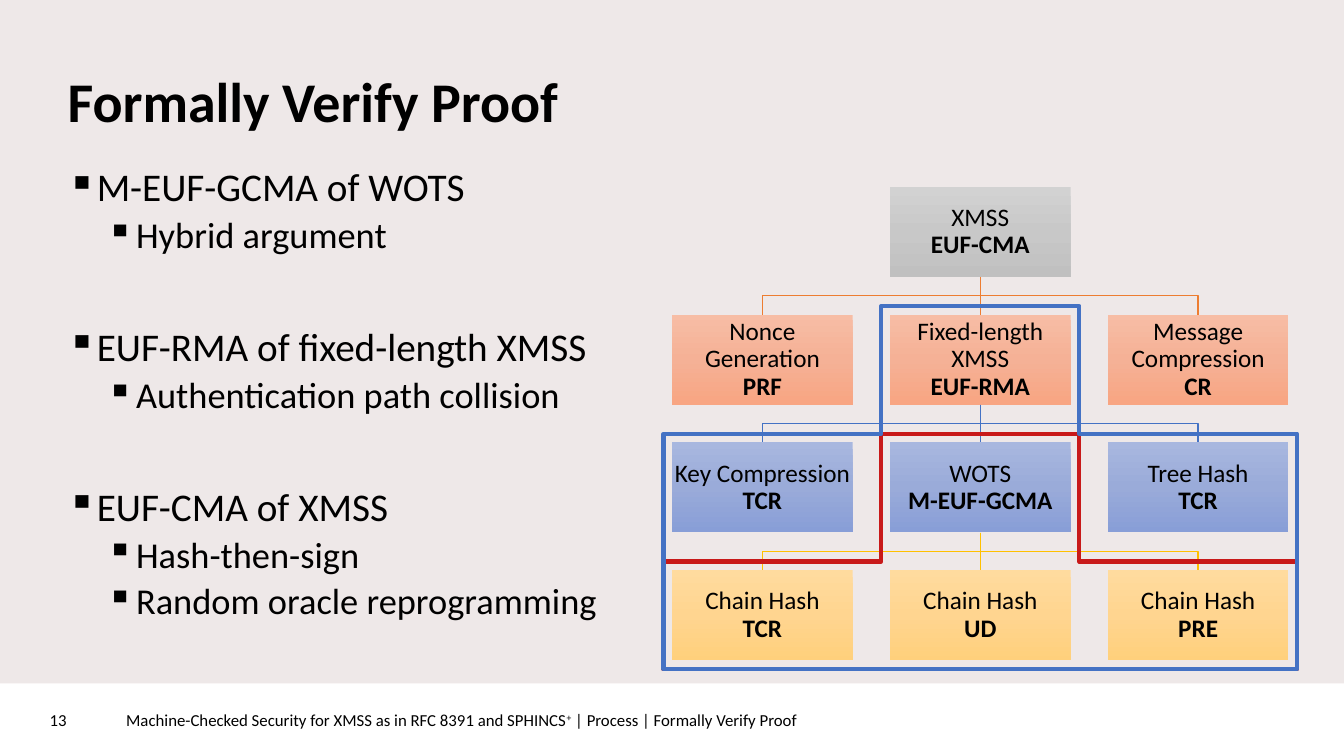
from copy import deepcopy

from lxml import etree
from pptx import Presentation
from pptx import util as u
from pptx.dml.color import RGBColor
from pptx.enum import shapes, text
from pptx.oxml.ns import qn

COLORS = {
    "background": "EEE8E8", "text": "000000", "footer": "FFFFFF",
    "orange": "ED7D31", "blue": "4472C4", "yellow": "FFC000", "red": "C81919",
}
GRADIENTS = {
    "gray": ("D2D2D2", "C8C8C8", "C0C0C0"),
    "orange": ("F7BDA5", "F5B196", "F8A582"),
    "blue": ("A8B7DF", "9AABD9", "889ED7"),
    "yellow": ("FFDB9E", "FFD590", "FFD07C"),
}
BOX_W, BOX_H = 4.55, 2.27
LEFT, TOP, STEP_X, STEP_Y = 16.94, 4.71, 5.49, 3.22
MARGIN = 0.22

BULLETS = [
    ("M-EUF-GCMA of WOTS", 0), ("Hybrid argument", 1),
    ("EUF-RMA of fixed-length XMSS", 0), ("Authentication path collision", 1),
    ("EUF-CMA of XMSS", 0), ("Hash-then-sign", 1), ("Random oracle reprogramming", 1),
]
TREE = [
    ("gray", {1: ("XMSS", "EUF-CMA")}),
    ("orange", {0: ("Nonce Generation", "PRF"), 1: ("Fixed-length XMSS", "EUF-RMA"),
                2: ("Message Compression", "CR")}),
    ("blue", {0: ("Key Compression", "TCR"), 1: ("WOTS", "M-EUF-GCMA"),
              2: ("Tree Hash", "TCR")}),
    ("yellow", {0: ("Chain Hash", "TCR"), 1: ("Chain Hash", "UD"),
                2: ("Chain Hash", "PRE")}),
]


class ProofSlide:
    """Holds the style and the current slide, and draws its elements."""

    font = "Calibri"

    def __init__(self, prs):
        self.s = prs.slides.add_slide(prs.slide_layouts[5])
        fill = self.s.background.fill
        fill.solid()
        fill.fore_color.rgb = self.rgb("background")

    def rgb(self, name):
        return RGBColor.from_string(COLORS[name])

    def run(self, p, words, size, bold=False):
        r = p.add_run()
        r.text = words
        r.font.name, r.font.size, r.font.bold = self.font, u.Pt(size), bold
        r.font.color.rgb = self.rgb("text")
        return r

    def title(self, words, x, y, w, h):
        sp = self.s.shapes.title
        sp.left, sp.top, sp.width, sp.height = map(u.Cm, (x, y, w, h))
        tf = sp.text_frame
        tf.vertical_anchor = text.MSO_ANCHOR.BOTTOM
        tf.auto_size = text.MSO_AUTO_SIZE.NONE
        p = tf.paragraphs[0]
        p.alignment, p.line_spacing = text.PP_ALIGN.LEFT, 0.9
        self.run(p, words, 40, True)

    def bullets(self, items, x, y, w, h):
        tf = self.s.shapes.add_textbox(*map(u.Cm, (x, y, w, h))).text_frame
        tf.word_wrap = True
        for i, (words, level) in enumerate(items):
            p = tf.add_paragraph() if i else tf.paragraphs[0]
            p.level, p.line_spacing = level, 0.9
            p.space_before = u.Pt(0 if i == 0 else 5 if level else 50.8)
            self.run(p, words, 26 if level else 28)
            pPr = p._p.get_or_add_pPr()
            pPr.set("marL", str(u.Cm(1.73 if level else 0.74)))
            pPr.set("indent", str(u.Cm(-0.74)))
            etree.SubElement(pPr, qn("a:buChar")).set("char", "▪")

    def rect(self, x, y, w, h, align):
        sp = self.s.shapes.add_shape(shapes.MSO_SHAPE.RECTANGLE, *map(u.Cm, (x, y, w, h)))
        sp.shadow.inherit = False
        sp.line.fill.background()
        sp.text_frame.word_wrap = True
        sp.text_frame.vertical_anchor = text.MSO_ANCHOR.MIDDLE
        sp.text_frame.paragraphs[0].alignment = align
        return sp

    def footer(self, parts, x, y, w, h, align):
        sp = self.rect(x, y, w, h, align)
        sp.fill.solid()
        sp.fill.fore_color.rgb = self.rgb("footer")
        for words, raised in parts:
            r = self.run(sp.text_frame.paragraphs[0], words, 12)
            if raised:
                r._r.get_or_add_rPr().set("baseline", "30000")

    def box(self, col, row, name, notion, gradient):
        sp = self.rect(LEFT + col * STEP_X, TOP + row * STEP_Y, BOX_W, BOX_H,
                       text.PP_ALIGN.CENTER)
        sp.fill.gradient()
        sp.fill.gradient_angle = 270
        stops = sp._element.spPr.find(".//" + qn("a:gsLst"))
        stops.insert(1, deepcopy(stops[0]))
        for i, (stop, color) in enumerate(zip(sp.fill.gradient_stops, GRADIENTS[gradient])):
            stop.position = i / 2
            stop.color.rgb = RGBColor.from_string(color)
        tf = sp.text_frame
        tf.margin_left = tf.margin_right = tf.margin_top = tf.margin_bottom = u.Cm(0.03)
        p = tf.paragraphs[0]
        p.line_spacing = 0.9
        self.run(p, name, 18)
        p.add_line_break()
        self.run(p, notion, 18, True)
        return sp

    def outline(self, points, color, width, close):
        start, *rest = [(u.Cm(x), u.Cm(y)) for x, y in points]
        builder = self.s.shapes.build_freeform(*start)
        builder.add_line_segments(rest, close=close)
        sp = builder.convert_to_shape()
        sp.shadow.inherit = False
        sp.fill.background()
        sp.line.color.rgb, sp.line.width = self.rgb(color), u.Pt(width)

    def straight(self, parent, child, color):
        cx = self.s.shapes.add_connector(shapes.MSO_CONNECTOR.STRAIGHT, 0, 0, 0, 0)
        cx.begin_connect(parent, 2)
        cx.end_connect(child, 0)
        cx.line.color.rgb, cx.line.width = self.rgb(color), u.Pt(1)
        etree.SubElement(cx._element.spPr, qn("a:effectLst"))

    def elbow(self, col, row, color):
        x0, x1 = (LEFT + c * STEP_X + BOX_W / 2 for c in (1, col))
        y1 = TOP + row * STEP_Y
        y0 = y1 - STEP_Y + BOX_H
        mid = (y0 + y1) / 2
        self.outline([(x0, y0), (x0, mid), (x1, mid), (x1, y1)], color, 1, False)

    def region(self, neck_row, shoulder_row, color):
        x0, x1 = (LEFT + c * STEP_X - MARGIN for c in (0, 1))
        x2, x3 = (LEFT + c * STEP_X + BOX_W + MARGIN for c in (1, 2))
        neck, shoulder = (TOP + r * STEP_Y - MARGIN for r in (neck_row, shoulder_row))
        bottom = TOP + 3 * STEP_Y + BOX_H + MARGIN
        self.outline([(x1, neck), (x2, neck), (x2, shoulder), (x3, shoulder),
                      (x3, bottom), (x0, bottom), (x0, shoulder), (x1, shoulder)],
                     color, 3, True)

    def tree(self, rows):
        parent = None
        for row, (color, cells) in enumerate(rows):
            boxes = {col: self.box(col, row, *cell, color) for col, cell in cells.items()}
            if parent is not None:
                for col in (0, 2):
                    self.elbow(col, row, color)
                self.straight(parent, boxes[1], color)
            parent = boxes[1]


def main():
    prs = Presentation()
    prs.slide_width, prs.slide_height = u.Cm(33.87), u.Cm(19.05)
    slide = ProofSlide(prs)
    slide.title("Formally Verify Proof", 1.45, 0.84, 30.99, 2.69)
    slide.bullets(BULLETS, 1.45, 4.11, 15, 13.11)
    slide.footer([("Machine-Checked Security for XMSS as in RFC 8391 and SPHINCS", False),
                  ("+", True), (" | Process | Formally Verify Proof", False)],
                 2.93, 17.22, 30.94, 1.83, text.PP_ALIGN.LEFT)
    slide.footer([("13", False)], 0, 17.22, 2.93, 1.83, text.PP_ALIGN.CENTER)
    slide.tree(TREE)
    slide.region(2, 3, "red")
    slide.region(1, 2, "blue")
    prs.save("out.pptx")


if __name__ == "__main__":
    main()
